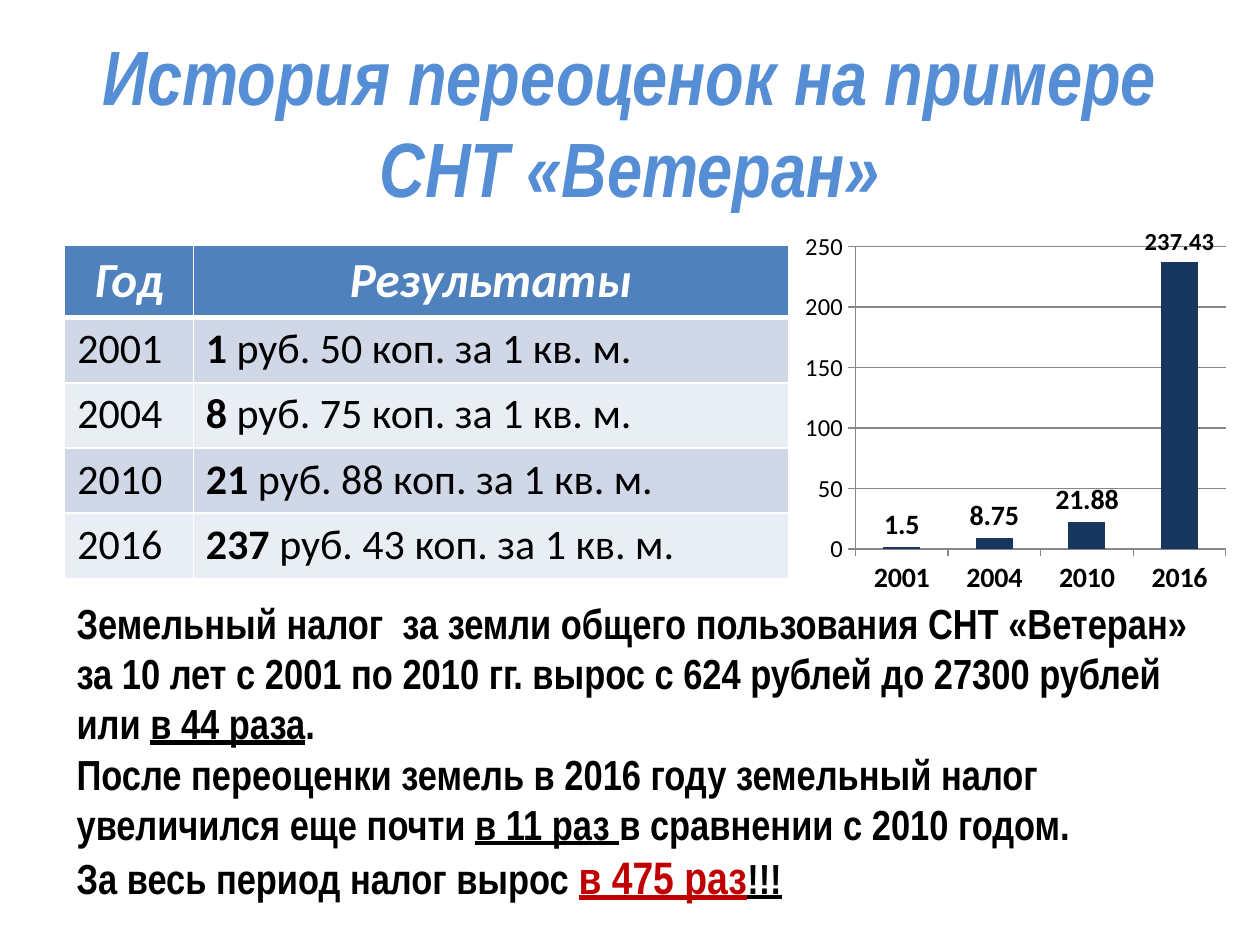
import pptx
import pptx.chart.data
import pptx.dml.color
import pptx.enum.chart
import pptx.enum.text
import pptx.oxml
import pptx.oxml.ns
import pptx.util
from dataclasses import dataclass

Pt = pptx.util.Pt
Align = pptx.enum.text.PP_ALIGN
Anchor = pptx.enum.text.MSO_ANCHOR
Enum = pptx.enum.chart


@dataclass(frozen=True)
class Theme:
    narrow: str = "Arial Narrow"
    sans: str = "Calibri"
    black: str = "000000"
    white: str = "FFFFFF"
    title: str = "558ED5"
    head: str = "4F81BD"
    bands: tuple = ("D0D8E8", "E9EDF4")
    bar: str = "17375E"
    grid: str = "868686"
    red: str = "C00000"
    big: int = 44
    header: int = 28
    body: int = 24
    stress: int = 26
    label: int = 16
    small: int = 14


T = Theme()

YEARS = ["2001", "2004", "2010", "2016"]
RATES = [1.5, 8.75, 21.88, 237.43]
NOTES = [
    [("Земельный налог  за земли общего пользования СНТ «Ветеран» за 10 лет "
      "с 2001 по 2010 гг. вырос с 624 рублей до 27300 рублей или ", {}),
     ("в 44 раза", {"underline": True}), (".", {})],
    [("После переоценки земель в 2016 году земельный налог увеличился еще почти ", {}),
     ("в 11 раз ", {"underline": True}), ("в сравнении с 2010 годом.", {})],
    [("За весь период налог вырос ", {}),
     ("в 475 раз", {"underline": True, "size": Pt(T.stress), "color": T.red}),
     ("!!!", {"underline": True})],
]


def rgb(code):
    return pptx.dml.color.RGBColor.from_string(code)


def style(item, **values):
    for key, value in values.items():
        if key == "color":
            item.color.rgb = rgb(value)
        else:
            setattr(item, key, value)


def fill(item, code):
    item.fill.solid()
    item.fill.fore_color.rgb = rgb(code)


def write(frame, paras, base, align=Align.LEFT):
    for index, runs in enumerate(paras):
        para = frame.add_paragraph() if index else frame.paragraphs[0]
        para.alignment = align
        for text, extra in runs:
            run = para.add_run()
            run.text = text
            style(run.font, **{**base, **extra})


def add_text(slide, box, paras, base, align=Align.LEFT, anchor=Anchor.TOP):
    frame = slide.shapes.add_textbox(*map(Pt, box)).text_frame
    style(frame, word_wrap=True, vertical_anchor=anchor)
    write(frame, paras, base, align)


def edge(cell, side, width):
    line = pptx.oxml.parse_xml(
        f'<a:ln{side} {pptx.oxml.ns.nsdecls("a")} w="{Pt(width)}"><a:solidFill>'
        f'<a:srgbClr val="{T.white}"/></a:solidFill></a:ln{side}>')
    cell._tc.get_or_add_tcPr().append(line)


def add_grid(slide, box, widths, heights):
    grid = slide.shapes.add_table(len(heights), len(widths), *map(Pt, box)).table
    for col, width in zip(grid.columns, widths):
        col.width = Pt(width)
    for row, height in zip(grid.rows, heights):
        row.height = Pt(height)
    rows = [[[("Год", {})], [("Результаты", {})]]]
    for year, rate in zip(YEARS, RATES):
        whole, cents = f"{rate:.2f}".split(".")
        rows.append([[(year, {})],
                     [(whole, {"bold": True}), (f" руб. {cents} коп. за 1 кв. м.", {})]])
    top = {"name": T.sans, "size": Pt(T.header), "color": T.white,
           "bold": True, "italic": True}
    plain = {"name": T.sans, "size": Pt(T.body), "color": T.black, "bold": False}
    for r, row in enumerate(rows):
        for c, runs in enumerate(row):
            cell = grid.cell(r, c)
            for side in "LRTB":
                thick = (r, side) in ((0, "B"), (1, "T"))
                edge(cell, side, 3 if thick else 1)
            fill(cell, T.bands[(r - 1) % 2] if r else T.head)
            write(cell.text_frame, [runs], plain if r else top,
                  Align.LEFT if r else Align.CENTER)


def place(chart, x, y, w, h):
    plot = chart._chartSpace.chart.plotArea
    for old in plot.findall(pptx.oxml.ns.qn("c:layout")):
        plot.remove(old)
    parts = "".join(f'<c:{key} val="{value}"/>' for key, value in (
        ("layoutTarget", "inner"), ("xMode", "edge"), ("yMode", "edge"),
        ("x", x), ("y", y), ("w", w), ("h", h)))
    plot.insert(0, pptx.oxml.parse_xml(
        f'<c:layout {pptx.oxml.ns.nsdecls("c")}><c:manualLayout>{parts}'
        '</c:manualLayout></c:layout>'))


def add_bars(slide, box):
    data = pptx.chart.data.CategoryChartData()
    data.categories = YEARS
    data.add_series("Series 1", RATES)
    chart = slide.shapes.add_chart(
        Enum.XL_CHART_TYPE.COLUMN_CLUSTERED, *map(Pt, box), data).chart
    style(chart, has_legend=False, has_title=False)
    style(chart.font, name=T.sans, size=Pt(T.small), color=T.black)
    place(chart, 0.13, 0.06, 0.85, 0.8)
    cat, val = chart.category_axis, chart.value_axis
    style(val, minimum_scale=0, maximum_scale=250, major_unit=50,
          has_major_gridlines=True)
    for axis, size, bold in ((cat, T.label, True), (val, T.small, False)):
        style(axis, major_tick_mark=Enum.XL_TICK_MARK.OUTSIDE)
        style(axis.tick_labels.font, name=T.sans, size=Pt(size), bold=bold,
              color=T.black)
        style(axis.format.line, width=Pt(0.75), color=T.grid)
    style(val.major_gridlines.format.line, width=Pt(0.75), color=T.grid)
    plot = chart.plots[0]
    style(plot, gap_width=150, vary_by_categories=False, has_data_labels=True)
    bars = plot.series[0]
    fill(bars.format, T.bar)
    last = bars.points[len(RATES) - 1].data_label
    for label, size in ((plot.data_labels, T.label), (bars.data_labels, T.label),
                        (last, T.small)):
        style(label, position=Enum.XL_LABEL_POSITION.OUTSIDE_END)
        style(label.font, name=T.sans, size=Pt(size), bold=True, color=T.black)
    style(bars.data_labels, show_value=True)


def main():
    deck = pptx.Presentation()
    style(deck, slide_width=Pt(720), slide_height=Pt(540))
    slide = deck.slides.add_slide(deck.slide_layouts[6])
    narrow = {"name": T.narrow, "bold": True}
    add_text(slide, (36, 21.6, 648, 95),
             [[("История переоценок на примере СНТ «Ветеран»", {})]],
             {**narrow, "size": Pt(T.big), "color": T.title, "italic": True},
             Align.CENTER, Anchor.MIDDLE)
    add_grid(slide, (37, 140, 413.5, 190.5), (73.5, 340), (41.5, *[37.25] * 4))
    add_bars(slide, (456.5, 128, 249, 216))
    add_text(slide, (36.7, 337.7, 652.3, 184.3), NOTES,
             {**narrow, "size": Pt(T.body), "color": T.black})
    deck.save("out.pptx")


if __name__ == "__main__":
    main()
